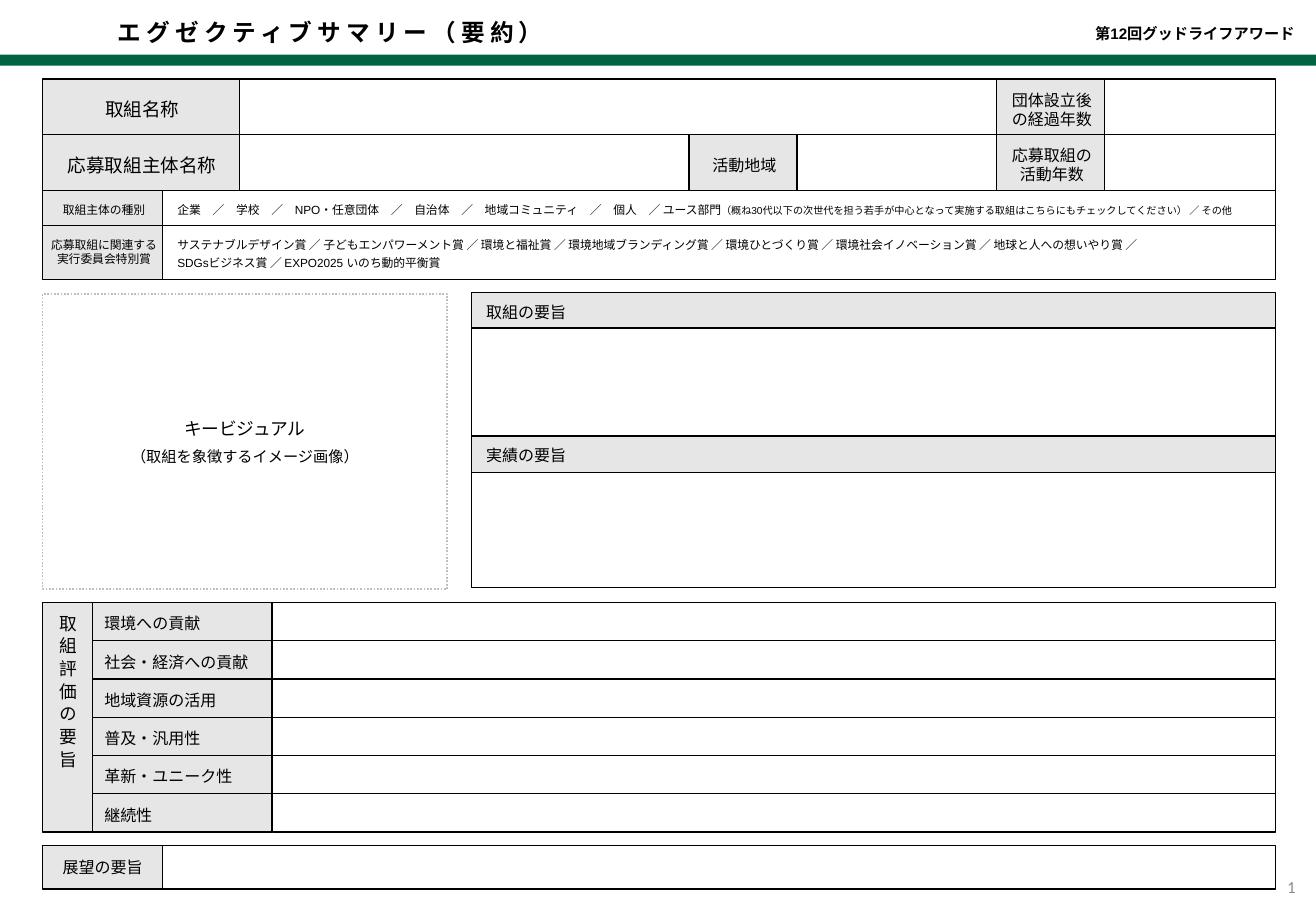
import pptx
import pptx.dml.color
import pptx.enum.dml
import pptx.enum.shapes
import pptx.enum.text
import pptx.util
from dataclasses import dataclass

Inches, Pt = pptx.util.Inches, pptx.util.Pt
ALIGN = pptx.enum.text.PP_ALIGN
ANCHOR = pptx.enum.text.MSO_ANCHOR


@dataclass(frozen=True)
class Theme:
    green: str = "006442"
    label: str = "E7E6E6"
    white: str = "FFFFFF"
    black: str = "000000"
    dotted: str = "BFBFBF"
    number: str = "8C8C8C"
    font: str = "Arial"
    number_font: str = "Calibri"
    title: float = 14
    large: float = 11
    visual: float = 10.5
    page: float = 10
    body: float = 9.5
    note: float = 9
    small: float = 7
    tiny: float = 6


T = Theme()
INSETS = (0.12, 0.08, 0.1, 0.05)
LEFT, RIGHT = 0.35, 10.5


def rgb(color):
    return pptx.dml.color.RGBColor.from_string(color)


def write(sp, *lines, size=T.body, font=T.font, color=T.black, bold=False, align=ALIGN.LEFT,
          anchor=ANCHOR.MIDDLE, insets=INSETS, wrap=True, tracking=0, spacing=None, gap=None):
    """Each line is a string or a list of (text, size) runs."""
    tf = sp.text_frame
    tf.word_wrap = wrap
    tf.vertical_anchor = anchor
    tf.margin_left, tf.margin_top, tf.margin_right, tf.margin_bottom = map(Inches, insets)
    for i, line in enumerate(lines):
        p = tf.paragraphs[0] if i == 0 else tf.add_paragraph()
        p.alignment = align
        if spacing:
            p.line_spacing = spacing[i]
        if gap:
            p.space_after = Pt(gap)
            if i:
                p.space_before = Pt(gap)
        for text, run_size in [(line, size)] if isinstance(line, str) else line:
            r = p.add_run()
            r.text = text
            r.font.name, r.font.size, r.font.bold = font, Pt(run_size), bold
            r.font.color.rgb = rgb(color)
            if tracking:
                r.font._element.set("spc", str(tracking * 100))
    return sp


def box(s, x, y, w, h, fill=T.white, line=T.black, width=0.75):
    sp = s.shapes.add_shape(pptx.enum.shapes.MSO_SHAPE.RECTANGLE, *map(Inches, (x, y, w, h)))
    sp.shadow.inherit = False
    sp.fill.solid()
    sp.fill.fore_color.rgb = rgb(fill)
    if line:
        sp.line.color.rgb = rgb(line)
        sp.line.width = Pt(width)
    else:
        sp.line.fill.background()
    return sp


def label(s, x, y, w, h, *lines, **fmt):
    return write(box(s, x, y, w, h, T.label), *lines, **fmt)


def text(s, x, y, w, h, *lines, **fmt):
    return write(s.shapes.add_textbox(*map(Inches, (x, y, w, h))), *lines, **fmt)


def header(s, width):
    box(s, 0, 0.45, width, 0.09, T.green, None)
    text(s, 0.89, 0.16, 4.53, 0.27, "エグゼクティブサマリー（要約）", size=T.title, bold=True,
         tracking=3, spacing=[0.9], anchor=ANCHOR.BOTTOM, insets=(0.08, 0.08, 0.1, 0.05))
    text(s, 8.55, 0.15, 2.2, 0.27, "第12回グッドライフアワード", size=T.note, bold=True,
         spacing=[0.9], align=ALIGN.RIGHT, anchor=ANCHOR.BOTTOM, insets=(0.1, 0.08, 0.1, 0.08))
    text(s, 10.13, 7.1, 0.63, 0.4, "1", size=T.page, font=T.number_font, color=T.number,
         align=ALIGN.RIGHT, insets=(0.1, 0.05, 0.1, 0.05))


def profile(s, x, y, w):
    """Names, region and years, then the two rows of choices."""
    row, step, years_w, blank_w, name_w = 0.47, 0.455, 0.89, 1.41, 1.62
    years_x = x + w - blank_w - years_w
    region_x = 5.67
    rows = [("取組名称", "団体設立後の経過年数"), ("応募取組主体名称", "応募取組の活動年数")]
    for i, (name, years) in enumerate(rows):
        top = y + i * step
        box(s, x + name_w, top, years_x - x - name_w, row)
        label(s, x, top, name_w, row, name, size=T.large, align=ALIGN.CENTER)
        label(s, years_x, top, years_w, row, years, align=ALIGN.CENTER)
        box(s, years_x + years_w, top, blank_w, row)
    label(s, region_x, y + step, years_w, row, "活動地域", align=ALIGN.CENTER)

    # Kind of applicant and special prizes
    kind_w, kind_y, prize_y = 0.99, y + 0.92, y + 1.21
    write(box(s, x + kind_w, kind_y, w - kind_w, 0.3),
          [("企業　／　学校　／　NPO・任意団体　／　自治体　／　地域コミュニティ　／　個人　／ ユース部門",
            T.small),
           ("（概ね30代以下の次世代を担う若手が中心となって実施する取組はこちらにもチェックしてください） ／ その他",
            T.tiny)], insets=(0.12, 0.07, 0.1, 0.05))
    label(s, x, kind_y, kind_w, 0.3, "取組主体の種別", size=T.small, align=ALIGN.CENTER,
          anchor=ANCHOR.TOP, insets=(0.12, 0.1, 0.1, 0.05))
    write(box(s, x + kind_w, prize_y, w - kind_w, 0.44),
          "サステナブルデザイン賞 ／ 子どもエンパワーメント賞 ／ 環境と福祉賞 ／ 環境地域ブランディング賞 ／ "
          "環境ひとづくり賞 ／ 環境社会イノベーション賞 ／ 地球と人への想いやり賞 ／",
          "SDGsビジネス賞 ／ EXPO2025 いのち動的平衡賞",
          size=T.small, spacing=[Pt(9), Pt(11)], insets=(0.12, 0.06, 0.1, 0.05))
    label(s, x, prize_y, kind_w, 0.44, "応募取組に関連する", "実行委員会特別賞", size=T.small,
          align=ALIGN.CENTER, wrap=False, insets=(0.12, 0.04, 0.1, 0.05))


def key_visual(s, x, y, w, h):
    sp = box(s, x, y, w, h, line=T.dotted, width=1)
    sp.line.dash_style = pptx.enum.dml.MSO_LINE.ROUND_DOT
    write(sp, [("キービジュアル", T.visual)], [("（取組を象徴するイメージ画像）", T.note)],
          align=ALIGN.CENTER, gap=2.4, insets=(0.1, 0.05, 0.1, 0.05))


def summaries(s, x, y, w):
    for title, head_h, body_h in [("取組の要旨", 0.29, 0.89), ("実績の要旨", 0.3, 0.95)]:
        box(s, x, y + head_h, w, body_h)
        label(s, x, y, w, head_h, title, anchor=ANCHOR.TOP)
        y += head_h + body_h


def evaluation(s, x, y, w, h):
    side_w, name_w = 0.41, 1.48
    names = ["環境への貢献", "社会・経済への貢献", "地域資源の活用", "普及・汎用性", "革新・ユニーク性", "継続性"]
    row = h / len(names)
    for i, name in enumerate(names):
        top = y + i * row
        label(s, x + side_w, top, name_w, row, name, insets=(0.1, 0.08, 0.1, 0.05))
        box(s, x + side_w + name_w, top, w - side_w - name_w, row)
    side = label(s, x, y, side_w, h, "取組評価の要旨", size=T.visual, font=T.number_font,
                 tracking=3, align=ALIGN.CENTER, insets=(0.1, 0.05, 0.1, 0.05))
    side.text_frame._txBody.bodyPr.set("vert", "eaVert")


def outlook(s, x, y, w, h):
    label_w = 0.99
    label(s, x, y, label_w, h, "展望の要旨", align=ALIGN.CENTER, insets=(0.1, 0, 0.1, 0))
    box(s, x + label_w, y, w - label_w, h)


def main():
    prs = pptx.Presentation()
    prs.slide_width, prs.slide_height = Inches(10.83), Inches(7.5)
    s = prs.slides.add_slide(prs.slide_layouts[6])
    full = RIGHT - LEFT
    header(s, 10.83)
    profile(s, LEFT, 0.65, full)
    key_visual(s, LEFT, 2.42, 3.33, 2.43)
    summaries(s, 3.88, 2.41, RIGHT - 3.88)
    evaluation(s, LEFT, 4.96, full, 1.89)
    outlook(s, LEFT, 6.96, full, 0.36)
    prs.save("out.pptx")


if __name__ == "__main__":
    main()
